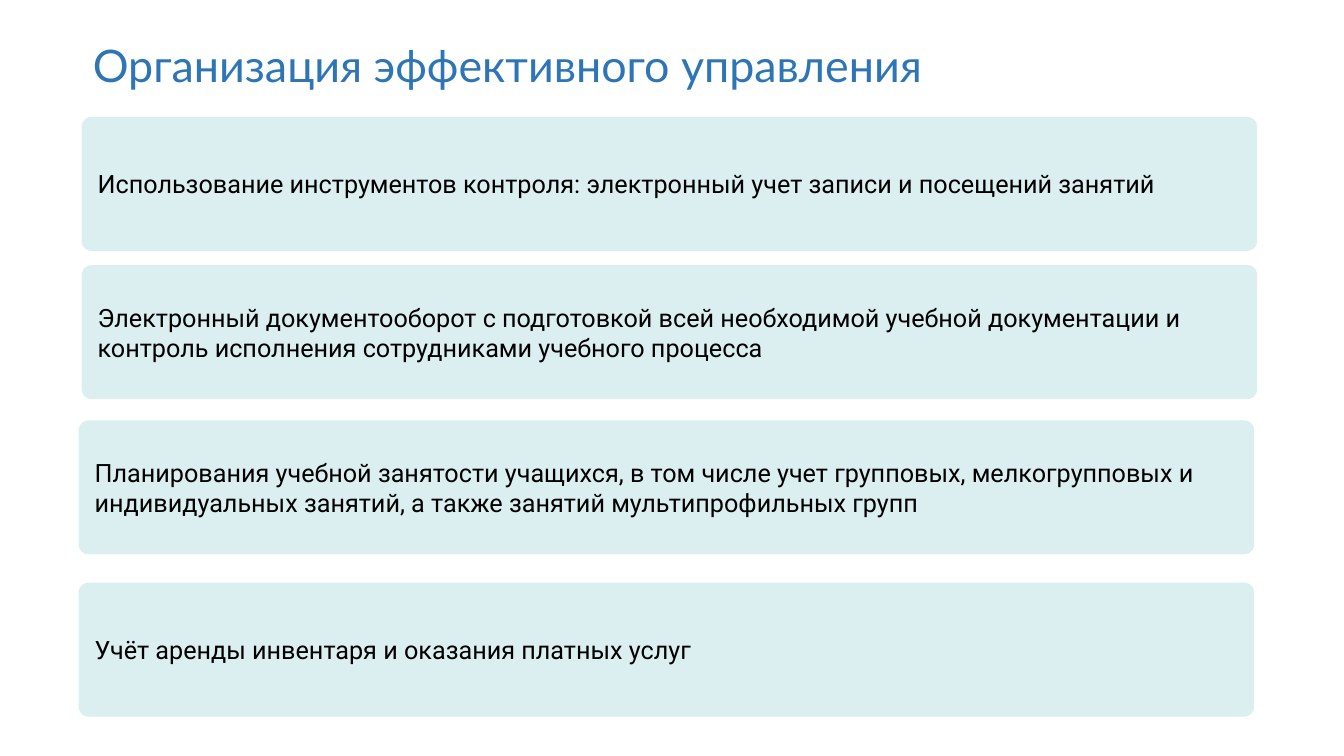
from pptx import Presentation
from pptx.dml.color import RGBColor
from pptx.enum import shapes, text
from pptx.util import Inches, Pt

COLORS = {"title": "2E75B6", "card": "DBEFF1", "text": "000000"}
CARD_W, CARD_H = 11.66, 1.33
CARDS = [
    (0.81, 1.16, "Использование инструментов контроля: электронный учет записи и посещений занятий"),
    (0.81, 2.63, "Электронный документооборот с подготовкой всей необходимой учебной документации "
                 "и контроль исполнения сотрудниками учебного процесса"),
    (0.78, 4.17, "Планирования учебной занятости учащихся, в том числе учет групповых, мелкогрупповых "
                 "и индивидуальных занятий, а также занятий мультипрофильных групп"),
    (0.78, 5.78, "Учёт аренды инвентаря и оказания платных услуг"),
]


def set_text(sp, words, font, size, color, anchor):
    tf = sp.text_frame
    tf.text = words
    tf.word_wrap = True
    tf.auto_size = text.MSO_AUTO_SIZE.NONE
    tf.vertical_anchor = anchor
    tf.margin_left = tf.margin_right = Inches(0.13)
    tf.margin_top = tf.margin_bottom = Inches(0.07)
    p = tf.paragraphs[0]
    p.alignment = text.PP_ALIGN.LEFT
    r = p.runs[0]
    r.font.name = font
    r.font.size = Pt(size)
    r.font.color.rgb = RGBColor.from_string(COLORS[color])


def place_title(s, x, y, w, h):
    sp = s.shapes.title
    sp.left, sp.top, sp.width, sp.height = map(Inches, (x, y, w, h))
    set_text(sp, "Организация эффективного управления", "Lato", 32, "title", text.MSO_ANCHOR.TOP)


def add_card(s, x, y, w, h, words):
    sp = s.shapes.add_shape(shapes.MSO_SHAPE.ROUNDED_RECTANGLE, *map(Inches, (x, y, w, h)))
    sp.adjustments[0] = 0.075
    sp.shadow.inherit = False
    sp.fill.solid()
    sp.fill.fore_color.rgb = RGBColor.from_string(COLORS["card"])
    sp.line.fill.background()
    set_text(sp, words, "Roboto", 18, "text", text.MSO_ANCHOR.MIDDLE)


def main():
    prs = Presentation()
    prs.slide_width, prs.slide_height = Inches(13.33), Inches(7.5)
    s = prs.slides.add_slide(prs.slide_layouts[5])
    place_title(s, 0.79, 0.3, 10.01, 0.67)
    for x, y, words in CARDS:
        add_card(s, x, y, CARD_W, CARD_H, words)
    prs.save("out.pptx")


if __name__ == "__main__":
    main()
